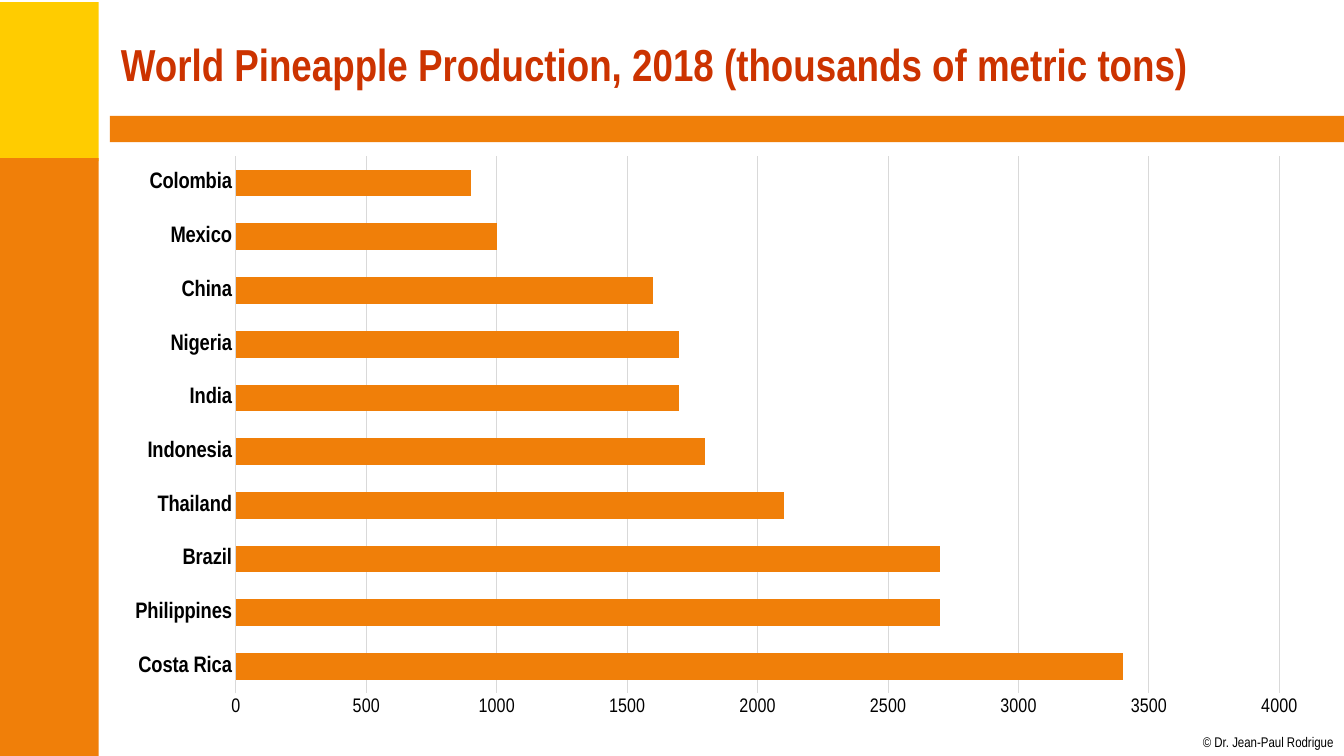
"""Build a slide with a bar chart of world pineapple production."""
from lxml import etree
from pptx import Presentation
from pptx import util as u
from pptx.chart.data import CategoryChartData
from pptx.dml.color import RGBColor
from pptx.enum import chart as ch, shapes, text
from pptx.oxml import ns

WIDE, HIGH = u.Inches(13.33), u.Inches(7.5)
FACE = "Arial Narrow"
GOLD = RGBColor(0xFF, 0xCC, 0x00)
ORANGE = RGBColor(0xF0, 0x7F, 0x09)
RED = RGBColor(0xCC, 0x33, 0x00)
BLACK = RGBColor(0, 0, 0)
GREY = RGBColor(0xD9, 0xD9, 0xD9)

BANDS = [
    ((-0.02, 0.02, 1, 1.58), GOLD),
    ((-0.02, 1.57, 1, 5.93), ORANGE),
    ((1.09, 1.15, 12.24, 0.26), ORANGE),
]
CROPS = {
    "Costa Rica": 3400, "Philippines": 2700, "Brazil": 2700,
    "Thailand": 2100, "Indonesia": 1800, "India": 1700,
    "Nigeria": 1700, "China": 1600, "Mexico": 1000, "Colombia": 900,
}
CHART = (1.1, 1.43, 12, 5.79)
PLOT = (2.34, 1.55, 10.35, 5.33)


def place(box):
    """Turn a box in inches into lengths."""
    return [u.Inches(n) for n in box]


def style(font, size, color=BLACK, bold=False):
    """Set the face, size, colour and weight of a font."""
    font.name, font.size, font.bold = FACE, u.Pt(size), bold
    font.color.rgb = color


def add_band(slide, box, color):
    """Add a plain filled rectangle."""
    band = slide.shapes.add_shape(shapes.MSO_SHAPE.RECTANGLE, *place(box))
    band.shadow.inherit = False
    band.fill.solid()
    band.fill.fore_color.rgb = color
    band.line.fill.background()


def add_text(slide, box, words, size, color=BLACK, bold=False, wrap=True):
    """Add one line of text and return its frame."""
    frame = slide.shapes.add_textbox(*place(box)).text_frame
    frame.word_wrap = wrap
    frame.vertical_anchor = text.MSO_ANCHOR.MIDDLE
    run = frame.paragraphs[0].add_run()
    run.text = words
    style(run.font, size, color, bold)
    return frame


def fix_plot(chart, box, inner):
    """Pin the inner plot area to its share of the chart box."""
    area = chart._chartSpace.chart.plotArea
    for old in area.findall(ns.qn("c:layout")):
        area.remove(old)
    layout = etree.Element(ns.qn("c:layout"))
    area.insert(0, layout)
    manual = etree.SubElement(layout, ns.qn("c:manualLayout"))
    left, top, wide, high = box
    parts = {
        "layoutTarget": "inner", "xMode": "edge", "yMode": "edge",
        "x": (inner[0] - left) / wide, "y": (inner[1] - top) / high,
        "w": inner[2] / wide, "h": inner[3] / high,
    }
    for tag, val in parts.items():
        etree.SubElement(manual, ns.qn("c:" + tag)).set("val", str(val))


def add_bars(slide, box, inner):
    """Add the bar chart of crops by country."""
    data = CategoryChartData()
    data.categories = list(CROPS)
    data.add_series("Series 1", list(CROPS.values()))
    kind = ch.XL_CHART_TYPE.BAR_CLUSTERED
    chart = slide.shapes.add_chart(kind, *place(box), data).chart
    chart.has_title = chart.has_legend = False
    style(chart.font, 14)
    plot = chart.plots[0]
    plot.gap_width, plot.vary_by_categories = 100, False
    fill = plot.series[0].format.fill
    fill.solid()
    fill.fore_color.rgb = ORANGE

    names, scale = chart.category_axis, chart.value_axis
    for axis in (names, scale):
        axis.major_tick_mark = axis.minor_tick_mark = ch.XL_TICK_MARK.NONE
    style(names.tick_labels.font, 16, bold=True)
    style(scale.tick_labels.font, 14)
    names.has_major_gridlines = False
    scale.has_major_gridlines = True
    scale.minimum_scale, scale.maximum_scale, scale.major_unit = 0, 4000, 500
    scale.format.line.fill.background()
    for line in (names.format.line, scale.major_gridlines.format.line):
        line.color.rgb, line.width = GREY, u.Pt(0.75)
    fix_plot(chart, box, inner)


def main():
    """Build and save the slide."""
    deck = Presentation()
    deck.slide_width, deck.slide_height = WIDE, HIGH
    slide = deck.slides.add_slide(deck.slide_layouts[6])
    for box, color in BANDS:
        add_band(slide, box, color)
    note = add_text(slide, (11.93, 7.28, 1.31, 0.17),
                    "© Dr. Jean-Paul Rodrigue", 10, wrap=False)
    note.margin_left = note.margin_right = 0
    note.margin_top = note.margin_bottom = 0
    add_text(slide, (1.1, 0.11, 12, 1.04),
             "World Pineapple Production, 2018 (thousands of metric tons)",
             32, RED, True)
    add_bars(slide, CHART, PLOT)
    deck.save("out.pptx")


if __name__ == "__main__":
    main()
